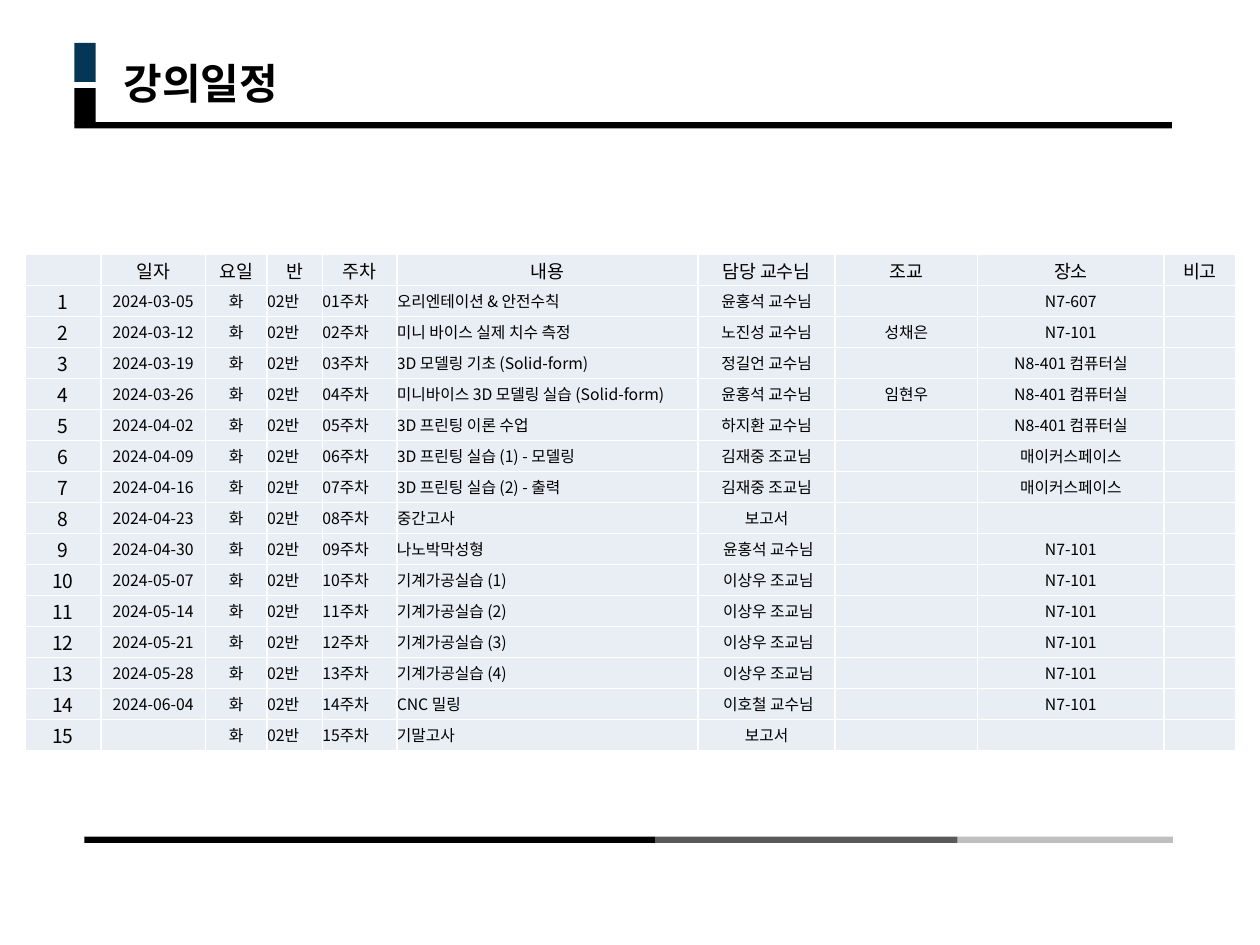
from dataclasses import dataclass
from typing import NamedTuple

from lxml.etree import SubElement
from pptx import Presentation
from pptx.dml.color import RGBColor
from pptx.enum.shapes import MSO_SHAPE
from pptx.enum.text import MSO_ANCHOR as Anchor, PP_ALIGN as Align
from pptx.oxml.ns import qn
from pptx.util import Inches, Pt


@dataclass(frozen=True)
class Theme:
    font: str = "Noto Sans CJK KR"
    black: str = "000000"
    navy: str = "063656"
    dark_gray: str = "595959"
    light_gray: str = "BFBFBF"
    cell: str = "E9EDF4"
    border: str = "FFFFFF"
    title_size: float = 24
    header_size: float = 10.5
    number_size: float = 11
    body_size: float = 9


class Bar(NamedTuple):
    left: float
    top: float
    width: float
    height: float
    color: str


class Column(NamedTuple):
    heading: str
    width: float
    align: Align = Align.CENTER
    size: float = Theme.body_size


class Lesson(NamedTuple):
    date: str
    content: str
    teacher: str
    place: str = ""
    assistant: str = ""


THEME = Theme()

BARS = [
    Bar(0.67, 6.64, 4.53, 0.05, THEME.black),
    Bar(5.2, 6.64, 2.4, 0.05, THEME.dark_gray),
    Bar(7.6, 6.64, 1.71, 0.05, THEME.light_gray),
    Bar(0.59, 0.97, 8.71, 0.05, THEME.black),
    Bar(0.59, 0.7, 0.17, 0.28, THEME.black),
    Bar(0.59, 0.34, 0.17, 0.31, THEME.navy),
]

COLUMNS = [
    Column("", 0.6, size=THEME.number_size),
    Column("일자", 0.83),
    Column("요일", 0.49),
    Column("반", 0.44, Align.LEFT),
    Column("주차", 0.59, Align.LEFT),
    Column("내용", 2.39, Align.LEFT),
    Column("담당 교수님", 1.09),
    Column("조교", 1.13),
    Column("장소", 1.48),
    Column("비고", 0.57),
]

LESSONS = [
    Lesson("2024-03-05", "오리엔테이션 & 안전수칙", "윤홍석 교수님", "N7-607"),
    Lesson("2024-03-12", "미니 바이스 실제 치수 측정", "노진성 교수님", "N7-101", "성채은"),
    Lesson("2024-03-19", "3D 모델링 기초 (Solid-form)", "정길언 교수님", "N8-401 컴퓨터실"),
    Lesson("2024-03-26", "미니바이스 3D 모델링 실습 (Solid-form)", "윤홍석 교수님",
           "N8-401 컴퓨터실", "임현우"),
    Lesson("2024-04-02", "3D 프린팅 이론 수업", "하지환 교수님", "N8-401 컴퓨터실"),
    Lesson("2024-04-09", "3D 프린팅 실습 (1) - 모델링", "김재중 조교님", "매이커스페이스"),
    Lesson("2024-04-16", "3D 프린팅 실습 (2) - 출력", "김재중 조교님", "매이커스페이스"),
    Lesson("2024-04-23", "중간고사", "보고서"),
    Lesson("2024-04-30", "나노박막성형", " 윤홍석 교수님", "N7-101"),
    Lesson("2024-05-07", "기계가공실습 (1)", " 이상우 조교님", "N7-101"),
    Lesson("2024-05-14", "기계가공실습 (2)", " 이상우 조교님", "N7-101"),
    Lesson("2024-05-21", "기계가공실습 (3)", " 이상우 조교님", "N7-101"),
    Lesson("2024-05-28", "기계가공실습 (4)", " 이상우 조교님", "N7-101"),
    Lesson("2024-06-04", "CNC 밀링", " 이호철 교수님", "N7-101"),
    Lesson("", "기말고사", "보고서"),
]


def write_text(frame, text: str, *, size: float, align: Align = Align.LEFT,
               bold: bool = False, color: str = THEME.black) -> None:
    paragraph = frame.paragraphs[0]
    paragraph.alignment = align
    if not text:
        SubElement(paragraph._p, qn("a:endParaRPr"), sz=str(int(size * 100)))
        return
    run = paragraph.add_run()
    run.text = text
    run.font.size = Pt(size)
    run.font.bold = bold
    run.font.color.rgb = RGBColor.from_string(color)
    run.font.name = THEME.font
    SubElement(run.font._element, qn("a:ea"), typeface=THEME.font)


def draw_bar(slide, bar: Bar) -> None:
    shape = slide.shapes.add_shape(
        MSO_SHAPE.RECTANGLE, Inches(bar.left), Inches(bar.top),
        Inches(bar.width), Inches(bar.height))
    shape.shadow.inherit = False
    shape.fill.solid()
    shape.fill.fore_color.rgb = RGBColor.from_string(bar.color)
    shape.line.fill.background()


def draw_title(slide, text: str) -> None:
    title = slide.shapes.title
    title.left, title.top = Inches(0.88), Inches(0.41)
    title.width, title.height = Inches(7.87), Inches(0.5)
    title.text_frame.vertical_anchor = Anchor.MIDDLE
    write_text(title.text_frame, text, size=THEME.title_size, bold=True)


def style_cell(cell) -> None:
    cell.margin_left = cell.margin_right = cell.margin_top = cell.margin_bottom = 0
    cell.vertical_anchor = Anchor.MIDDLE
    for side in ("lnL", "lnR", "lnT", "lnB"):
        line = SubElement(cell._tc.get_or_add_tcPr(), qn(f"a:{side}"), w=str(Pt(1)))
        fill = SubElement(line, qn("a:solidFill"))
        SubElement(fill, qn("a:srgbClr"), val=THEME.border)
    cell.fill.solid()
    cell.fill.fore_color.rgb = RGBColor.from_string(THEME.cell)


def lesson_values(week: int, lesson: Lesson) -> list[str]:
    return [str(week), lesson.date, "화", "02반", f"{week:02}주차", lesson.content,
            lesson.teacher, lesson.assistant, lesson.place, ""]


def draw_schedule(slide) -> None:
    row_count = len(LESSONS) + 1
    row_height = 3.94 / row_count
    total_width = sum(column.width for column in COLUMNS)
    schedule = slide.shapes.add_table(
        row_count, len(COLUMNS), Inches(0.2), Inches(2.02),
        Inches(total_width), Inches(row_height * row_count)).table
    schedule.first_row = schedule.horz_banding = False
    for row in schedule.rows:
        row.height = Inches(row_height)
    weeks = [lesson_values(week, lesson) for week, lesson in enumerate(LESSONS, 1)]
    for index, column in enumerate(COLUMNS):
        schedule.columns[index].width = Inches(column.width)
        heading = schedule.cell(0, index)
        style_cell(heading)
        write_text(heading.text_frame, column.heading,
                   size=THEME.header_size, align=Align.CENTER)
        for week, values in enumerate(weeks, 1):
            cell = schedule.cell(week, index)
            style_cell(cell)
            write_text(cell.text_frame, values[index], size=column.size, align=column.align)


def main() -> None:
    deck = Presentation()
    deck.slide_width, deck.slide_height = Inches(10), Inches(7.5)
    slide = deck.slides.add_slide(deck.slide_layouts[5])
    for bar in BARS:
        draw_bar(slide, bar)
    draw_title(slide, "강의일정")
    draw_schedule(slide)
    deck.save("out.pptx")


if __name__ == "__main__":
    main()
